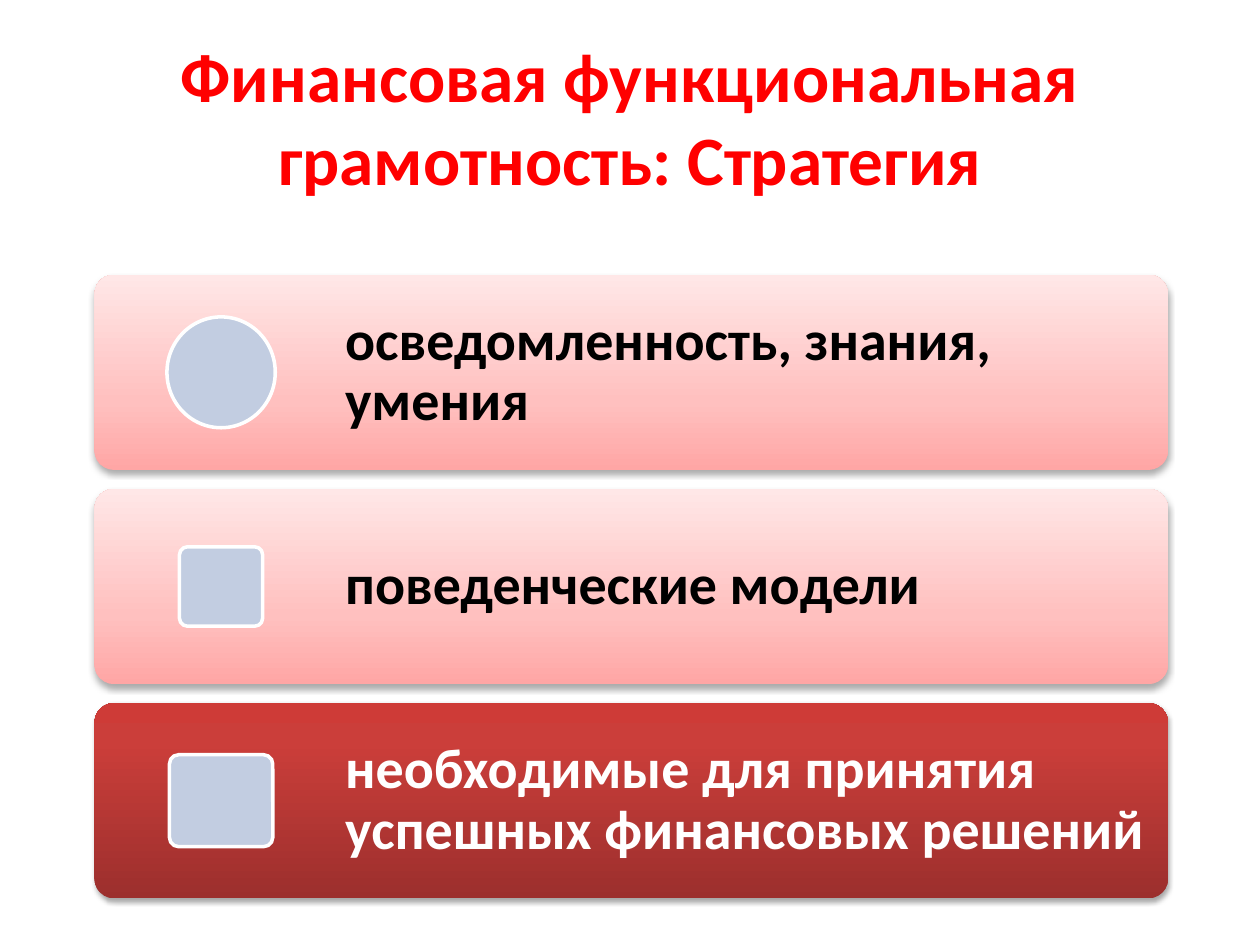
from lxml.etree import SubElement
from pptx import Presentation
from pptx.dml.color import RGBColor
from pptx.enum.shapes import MSO_SHAPE
from pptx.enum.text import MSO_ANCHOR, PP_ALIGN
from pptx.oxml.ns import qn
from pptx.util import Inches, Pt

COLORS = {
    "title": "FF0000",
    "black": "000000",
    "white": "FFFFFF",
    "icon": "C2CDE1",
}
LIGHT_RED = [(0, "FFA6A5"), (35, "FFC0BF"), (100, "FFE7E7")]
DARK_RED = [(0, "9C2F2D"), (80, "CB3E3A"), (100, "CE3B37")]
LIGHT_SHADOW = {"opacity": 32, "blur": 3.5, "distance": 2.2}
DARK_SHADOW = {"opacity": 35, "blur": 3.1, "distance": 1.8}

BAND_LEFT, BAND_TOP, BAND_WIDTH, BAND_HEIGHT = 0.75, 2.18, 8.52, 1.55
BAND_STEP = 1.7
TEXT_LEFT = 2.61
ICON_CENTER = 1.755

BANDS = [
    ("осведомленность, знания, умения", "black", LIGHT_RED, LIGHT_SHADOW,
     MSO_SHAPE.OVAL, 0.86, 0.88),
    ("поведенческие модели", "black", LIGHT_RED, LIGHT_SHADOW,
     MSO_SHAPE.ROUNDED_RECTANGLE, 0.66, 0.63),
    ("необходимые для принятия успешных финансовых решений", "white",
     DARK_RED, DARK_SHADOW, MSO_SHAPE.ROUNDED_RECTANGLE, 0.82, 0.73),
]


def add_text(slide, text, left, top, width, height, *, size, color,
             align=PP_ALIGN.LEFT, inset=0.1, line_spacing=1.0):
    box = slide.shapes.add_textbox(
        Inches(left), Inches(top), Inches(width), Inches(height))
    frame = box.text_frame
    frame.word_wrap = True
    frame.vertical_anchor = MSO_ANCHOR.MIDDLE
    frame.margin_left = frame.margin_right = Inches(inset)
    frame.margin_top = frame.margin_bottom = Inches(inset)
    paragraph = frame.paragraphs[0]
    paragraph.alignment = align
    paragraph.line_spacing = line_spacing
    run = paragraph.add_run()
    run.text = text
    run.font.name = "Calibri"
    run.font.size = Pt(size)
    run.font.bold = True
    run.font.color.rgb = RGBColor.from_string(COLORS[color])


def add_shape(slide, kind, left, top, width, height):
    shape = slide.shapes.add_shape(
        kind, Inches(left), Inches(top), Inches(width), Inches(height))
    shape.shadow.inherit = False
    if kind == MSO_SHAPE.ROUNDED_RECTANGLE:
        shape.adjustments[0] = 0.1
    return shape


def set_gradient(shape, stops):
    shape.fill.gradient()
    shape.fill.gradient_angle = 90
    stop_list = shape.element.spPr.find(".//" + qn("a:gsLst"))
    for stop in list(stop_list):
        stop_list.remove(stop)
    for position, color in stops:
        stop = SubElement(stop_list, qn("a:gs"), pos=str(position * 1000))
        SubElement(stop, qn("a:srgbClr"), val=color)


def set_shadow(shape, opacity, blur, distance):
    effects = shape.element.spPr.find(qn("a:effectLst"))
    shadow = SubElement(
        effects, qn("a:outerShdw"), blurRad=str(Pt(blur)),
        dist=str(Pt(distance)), dir="5400000", rotWithShape="0")
    color = SubElement(shadow, qn("a:srgbClr"), val=COLORS["black"])
    SubElement(color, qn("a:alpha"), val=str(opacity * 1000))


def add_icon(slide, kind, middle, width, height):
    icon = add_shape(slide, kind, ICON_CENTER - width / 2,
                     middle - height / 2, width, height)
    icon.fill.solid()
    icon.fill.fore_color.rgb = RGBColor.from_string(COLORS["icon"])
    icon.line.color.rgb = RGBColor.from_string(COLORS["white"])
    icon.line.width = Pt(2)


def add_band(slide, top, text, color, stops, shadow, icon, icon_width,
             icon_height):
    band = add_shape(slide, MSO_SHAPE.ROUNDED_RECTANGLE,
                     BAND_LEFT, top, BAND_WIDTH, BAND_HEIGHT)
    set_gradient(band, stops)
    set_shadow(band, **shadow)
    band.line.fill.background()
    add_text(slide, text, TEXT_LEFT, top,
             BAND_LEFT + BAND_WIDTH - TEXT_LEFT, BAND_HEIGHT,
             size=32, color=color, inset=0.13, line_spacing=0.9)
    add_icon(slide, icon, top + BAND_HEIGHT / 2, icon_width, icon_height)


def main():
    presentation = Presentation()
    presentation.slide_width = Inches(10)
    presentation.slide_height = Inches(7.5)
    slide = presentation.slides.add_slide(presentation.slide_layouts[6])
    add_text(slide, "Финансовая функциональная грамотность: Стратегия",
             0.5, 0.3, 9, 1.25, size=39.6, color="title",
             align=PP_ALIGN.CENTER)
    for index, band in enumerate(BANDS):
        add_band(slide, BAND_TOP + index * BAND_STEP, *band)
    presentation.save("out.pptx")


if __name__ == "__main__":
    main()
